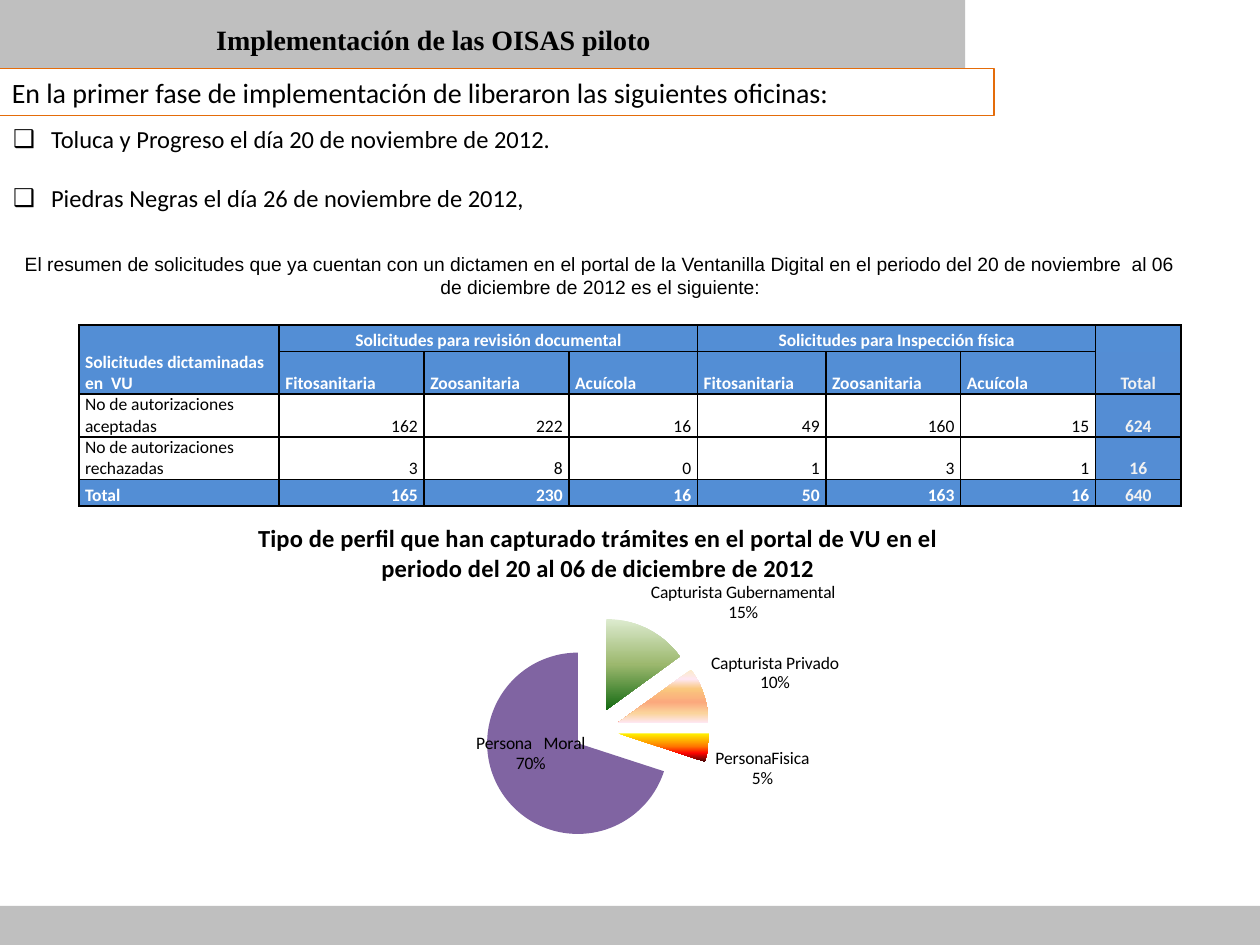
"""Build the slide on the pilot OISAS offices."""
from lxml import etree
from pptx import Presentation
from pptx.chart.data import CategoryChartData
from pptx.dml.color import RGBColor
from pptx.enum.chart import XL_CHART_TYPE, XL_LABEL_POSITION
from pptx.enum.shapes import MSO_SHAPE
from pptx.enum.text import MSO_ANCHOR, MSO_AUTO_SIZE, PP_ALIGN
from pptx.oxml.ns import qn
from pptx.util import Inches, Pt

LEFT, MID, RIGHT = PP_ALIGN.LEFT, PP_ALIGN.CENTER, PP_ALIGN.RIGHT
CENTER, BOTTOM, TOP = MSO_ANCHOR.MIDDLE, MSO_ANCHOR.BOTTOM, MSO_ANCHOR.TOP
FIXED = MSO_AUTO_SIZE.NONE
RECT, PIE = MSO_SHAPE.RECTANGLE, XL_CHART_TYPE.PIE
OUTER = XL_LABEL_POSITION.OUTSIDE_END
WIDE, HIGH = Inches(10), Inches(7.5)
BLACK, WHITE, PALE, GRAY = "000000", "FFFFFF", "F2F2F2", "BFBFBF"
BLUE, SIDE, ORANGE = "538ED5", "548DD4", "E46C0A"
SANS = "Calibri"

COLS = [1.59, 1.15, 1.15, 1.02, 1.02, 1.07, 1.07, 0.68]
ROWS = [0.21, 0.33, 0.34, 0.34, 0.21]
KINDS = ["Fitosanitaria", "Zoosanitaria", "Acuícola"]
CELLS = [
    ["Solicitudes dictaminadas en  VU",
     "Solicitudes para revisión documental", "", "",
     "Solicitudes para Inspección física", "", "", ""],
    ["", *KINDS, *KINDS, "Total"],
    ["No de autorizaciones aceptadas", "162", "222", "16", "49", "160", "15", "624"],
    ["No de autorizaciones rechazadas", "3", "8", "0", "1", "3", "1", "16"],
    ["Total", "165", "230", "16", "50", "163", "16", "640"],
]
SLICES = [
    ("CapturistaGubernamental", 15, "Capturista Gubernamental\n15%", None,
     [(0, "DDEBCF"), (50, "9CB86E"), (100, "156B13")]),
    ("CapturistaPrivado", 10, "Capturista Privado\n10%", None,
     [(0, "FBEAC7"), (18, "FEE7F2"), (36, "FAC77D"),
      (61, "FBA97D"), (82, "FBD49C"), (100, "FEE7F2")]),
    ("PersonaFisica", 5, "PersonaFisica\n5%", None,
     [(0, "FFF200"), (45, "FF7A00"), (70, "FF0300"), (100, "4D0808")]),
    ("PersonaMoral", 70, "Persona   Moral\n70%", (0.09, -0.18), "8064A2"),
]


def color(code):
    """Turn a hex string into a colour."""
    return RGBColor.from_string(code)


def area(x, y, w, h):
    """Turn percentages of the slide into a box."""
    return [int(part * size / 100) for part, size in
            ((x, WIDE), (y, HIGH), (w, WIDE), (h, HIGH))]


def node(host, tag, **attrs):
    """Append an XML element."""
    item = etree.SubElement(host, qn(tag))
    for name, value in attrs.items():
        item.set(name, str(value))
    return item


def style(font, size, code=BLACK, face=SANS, bold=False):
    """Format a font."""
    font.size, font.name, font.bold = Pt(size), face, bold
    font.color.rgb = color(code)


def write(para, text, size, align=LEFT, **look):
    """Add one formatted run to a paragraph."""
    para.alignment = align
    run = para.add_run()
    run.text = text
    style(run.font, size, **look)


def setup(frame, anchor=CENTER):
    """Set wrapping and anchor of a text frame."""
    frame.word_wrap, frame.auto_size = True, FIXED
    frame.vertical_anchor = anchor
    return frame.paragraphs[0]


def move(shape, box):
    """Put a placeholder in a box."""
    shape.left, shape.top, shape.width, shape.height = box


def bar(slide, box):
    """Add a grey band behind everything."""
    shape = slide.shapes.add_shape(RECT, *box)
    shape.shadow.inherit = False
    shape.fill.solid()
    shape.fill.fore_color.rgb = color(GRAY)
    shape.line.fill.background()
    slide.shapes._spTree.insert(2, shape._element)


def lead(slide, box, text):
    """Add the outlined lead sentence."""
    shape = slide.shapes.add_shape(RECT, *box)
    shape.shadow.inherit = False
    shape.fill.background()
    shape.line.color.rgb = color(ORANGE)
    shape.line.width = Pt(0.75)
    write(setup(shape.text_frame), text, 16)


def bullets(body, lines):
    """Fill the body with box bullets."""
    para = setup(body.text_frame, TOP)
    for i, line in enumerate(lines):
        if i:
            para = body.text_frame.add_paragraph()
        props = para._p.get_or_add_pPr()
        props.set("marL", str(Inches(0.3)))
        props.set("indent", str(-Inches(0.3)))
        para.space_before = Pt(17 if i else 0)
        node(props, "a:buChar", char="❑")
        write(para, line, 14)


def edges(cell, sides):
    """Draw the named borders of a cell and hide the rest."""
    props = cell._tc.get_or_add_tcPr()
    for i, side in enumerate("LRTB"):
        line = etree.Element(qn("a:ln" + side), w=str(Pt(1)))
        if side in sides:
            node(node(line, "a:solidFill"), "a:srgbClr", val=BLACK)
        else:
            node(line, "a:noFill")
        props.insert(i, line)


def fill_cell(cell, r, c, text):
    """Format one table cell by its row and column."""
    last = c == len(COLS) - 1
    plain = r in (2, 3) and not last
    if plain:
        cell.fill.background()
    else:
        cell.fill.solid()
        cell.fill.fore_color.rgb = color(SIDE if last and 0 < r < 4 else BLUE)
    edges(cell, "LRT" if last and r == 0 else "LRB" if last and r == 1 else "LRTB")
    cell.vertical_anchor = BOTTOM
    cell.margin_left = cell.margin_right = Inches(0.05)
    cell.margin_top = cell.margin_bottom = 0
    para = cell.text_frame.paragraphs[0]
    para.font.size = Pt(10)
    if text:
        align = MID if last or (r == 0 and c) else RIGHT if r > 1 and c else LEFT
        tone = BLACK if plain else PALE if last else WHITE
        write(para, text, 10, align, code=tone, bold=not plain)


def grid(slide, box):
    """Add the table of requests."""
    table = slide.shapes.add_table(len(ROWS), len(COLS), *box).table
    table.first_row = table.horz_banding = False
    for col, width in zip(table.columns, COLS):
        col.width = Inches(width)
    for row, height in zip(table.rows, ROWS):
        row.height = Inches(height)
    for r, row in enumerate(CELLS):
        for c, text in enumerate(row):
            fill_cell(table.cell(r, c), r, c, text)
    for start, end in (((0, 0), (1, 0)), ((0, 1), (0, 3)), ((0, 4), (0, 6))):
        table.cell(*start).merge(table.cell(*end))


def place(host, index, **values):
    """Give a chart part a manual layout."""
    for old in host.findall(qn("c:layout")):
        host.remove(old)
    layout = etree.Element(qn("c:layout"))
    manual = node(layout, "c:manualLayout")
    for name, value in values.items():
        node(manual, "c:" + name, val=value)
    host.insert(index, layout)


def paint(point, tone):
    """Fill a slice with a colour or a downward gradient."""
    fill = point.format.fill
    if isinstance(tone, str):
        fill.solid()
        fill.fore_color.rgb = color(tone)
        return
    fill.gradient()
    fill.gradient_angle = 270
    stops = fill._fill._gradFill.find(qn("a:gsLst"))
    for old in list(stops):
        stops.remove(old)
    for share, code in tone:
        node(node(stops, "a:gs", pos=share * 1000), "a:srgbClr", val=code)


def pie(slide, box, title):
    """Add the exploded pie of profiles."""
    data = CategoryChartData()
    data.categories = [part[0] for part in SLICES]
    data.add_series("Series 1", [part[1] for part in SLICES])
    chart = slide.shapes.add_chart(PIE, *box, data).chart
    style(chart.font, 10)
    chart.has_legend, chart.has_title = False, True
    write(chart.chart_title.text_frame.paragraphs[0], title, 14, MID, bold=True)
    place(chart.chart_title._element, 1, xMode="edge", yMode="edge", x=0.14, y=0.04)
    place(chart._chartSpace.chart.plotArea, 0, layoutTarget="inner",
          xMode="edge", yMode="edge", x=0, y=0.31, w=0.99, h=0.61)
    plot = chart.plots[0]
    plot.vary_by_categories = True
    series = plot.series[0]
    burst = etree.Element(qn("c:explosion"), val="25")
    series._element.find(qn("c:tx")).addnext(burst)
    labels = series.data_labels
    labels.show_value = False
    labels.show_percentage = labels.show_category_name = True
    for old in labels._element.findall(qn("c:showLeaderLines")):
        labels._element.remove(old)
    node(labels._element, "c:showLeaderLines", val=0)
    for i, (_, _, text, _, tone) in enumerate(SLICES):
        point = series.points[i]
        paint(point, tone)
        frame = point.data_label.text_frame
        for j, line in enumerate(text.split("\n")):
            para = frame.add_paragraph() if j else frame.paragraphs[0]
            write(para, line, 10, MID)
        point.data_label.position = OUTER
    for label, part in zip(series._element.iter(qn("c:dLbl")), SLICES):
        if part[3]:
            place(label, 1, x=part[3][0], y=part[3][1])


def main():
    """Build and save the slide."""
    deck = Presentation()
    deck.slide_width, deck.slide_height = WIDE, HIGH
    slide = deck.slides.add_slide(deck.slide_layouts[1])
    title, body = slide.placeholders
    bar(slide, area(0, 0, 76.6, 7.3))
    bar(slide, area(0, 95.87, 100, 4.13))
    move(title, area(2.5, 1.73, 63.8, 4.93))
    write(setup(title.text_frame), "Implementación de las OISAS piloto", 16, MID,
          face="Times New Roman", bold=True)
    lead(slide, area(-0.05, 7.28, 78.95, 4.93),
         "En la primer fase de implementación de liberaron las siguientes oficinas:")
    move(body, area(0.05, 12.45, 50, 13))
    bullets(body, ["Toluca y Progreso el día 20 de noviembre de 2012.",
                   "Piedras Negras el día 26 de noviembre de 2012,"])
    note = slide.shapes.add_textbox(*area(0, 26, 95.3, 6.27))
    write(setup(note.text_frame),
          "El resumen de solicitudes que ya cuentan con un dictamen en el portal de la "
          "Ventanilla Digital en el periodo del 20 de noviembre  al 06 de diciembre de "
          "2012 es el siguiente:", 11, MID, face="Arial")
    grid(slide, area(6.25, 34.4, 87.5, 19.07))
    pie(slide, area(9.4, 53.07, 76.6, 39.33),
        "Tipo de perfil que han capturado trámites en el portal de VU en el "
        "periodo del 20 al 06 de diciembre de 2012")
    deck.save("out.pptx")


if __name__ == "__main__":
    main()
